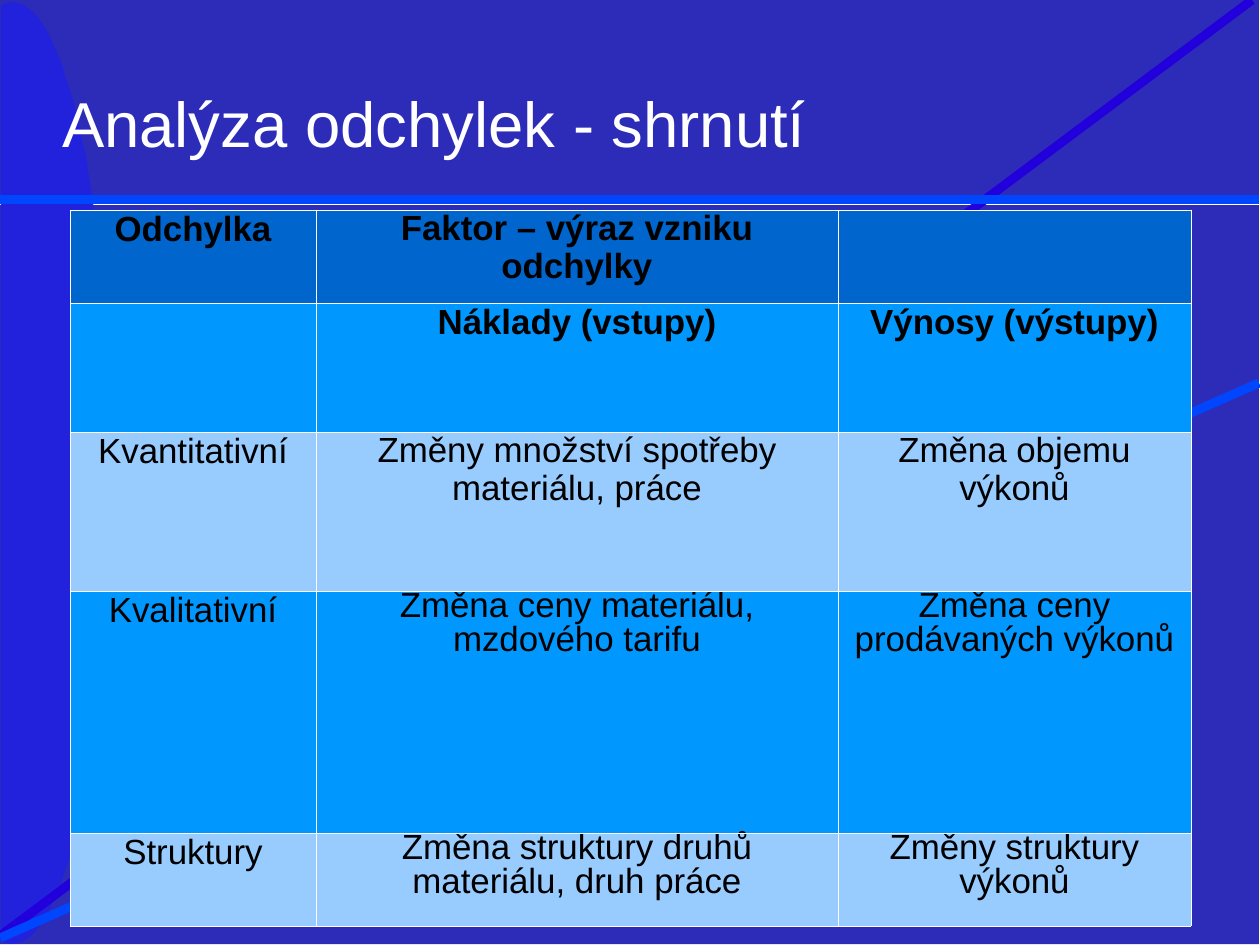
import math
import pptx
import pptx.util
import pptx.dml.color
import pptx.enum.shapes
import pptx.enum.text
import pptx.oxml
import pptx.oxml.ns

THEME = {
    "font": "Arial", "title_size": 40, "cell_size": 22,
    "background": "2C2CB8", "ellipse": "2222DC",
    "dark_line": "2200DC", "bright_line": "0046FF", "line_width": 5.67,
    "title": "FFFFFF", "cell_text": "000000", "border": "FFFFFF",
    "rows": ["0065CC", "0098FF", "98CCFF", "0098FF", "98CCFF"],
}
PX = 8007  # EMU per px
COLOR = pptx.dml.color.RGBColor.from_string
ALIGN = pptx.enum.text.PP_ALIGN


def px(*lengths):
    return [pptx.util.Emu(length * PX) for length in lengths]


def format_runs(para, size, color, bold=False):
    for span in para.runs:
        span.font.name = THEME["font"]
        span.font.size = pptx.util.Pt(size)
        span.font.bold = bold
        span.font.color.rgb = COLOR(color)


deck = pptx.Presentation()
deck.slide_width, deck.slide_height = px(1260, 945)
page = deck.slides.add_slide(deck.slide_layouts[5])

# Background panels above and below the horizontal line
panels = [
    page.shapes.add_shape(pptx.enum.shapes.MSO_SHAPE.RECTANGLE, *px(0, top, 1259, height))
    for top, height in [(0, 195), (205, 739)]
]

# Half ellipse along the left edge
outline = [
    (max(0, round(13 + 98 * math.cos(math.radians(angle)))),
     round(473 + 471 * math.sin(math.radians(angle))))
    for angle in range(-97, 98, 2)
]
builder = page.shapes.build_freeform(*outline[0], scale=PX)
builder.add_line_segments(outline[1:], close=True)
ellipse = builder.convert_to_shape()

for shape, color in [(panels[0], "background"), (panels[1], "background"), (ellipse, "ellipse")]:
    shape.shadow.inherit = False
    shape.fill.solid()
    shape.fill.fore_color.rgb = COLOR(THEME[color])
    shape.line.fill.background()

# Decorative lines
for ends, color in [
    ((1252, 0, 0, 936), "dark_line"),
    ((1259, 200, 0, 200), "bright_line"),
    ((1259, 383, 0, 938), "bright_line"),
]:
    line = page.shapes.add_connector(pptx.enum.shapes.MSO_CONNECTOR.STRAIGHT, *px(*ends))
    line.line.color.rgb = COLOR(THEME[color])
    line.line.width = pptx.util.Pt(THEME["line_width"])
    line.element.spPr.append(pptx.oxml.parse_xml(
        f'<a:effectLst {pptx.oxml.ns.nsdecls("a")}/>'))

# Title, brought in front of the background
title = page.shapes.title
title.element.getparent().append(title.element)
title.left, title.top, title.width, title.height = px(62, 51, 1095, 137)
frame = title.text_frame
frame.text = "Analýza odchylek - shrnutí"
frame.word_wrap = True
frame.auto_size = pptx.enum.text.MSO_AUTO_SIZE.NONE
frame.vertical_anchor = pptx.enum.text.MSO_ANCHOR.TOP
frame.margin_left, frame.margin_top, frame.margin_right, frame.margin_bottom = px(0, 33, 0, 0)
frame.paragraphs[0].alignment = ALIGN.LEFT
format_runs(frame.paragraphs[0], THEME["title_size"], THEME["title"])

# Table of deviations
rows = [
    ["Odchylka", "Faktor – výraz vzniku\nodchylky", ""],
    ["", "Náklady (vstupy)", "Výnosy (výstupy)"],
    ["Kvantitativní", "Změny množství spotřeby\nmateriálu, práce", "Změna objemu\nvýkonů"],
    ["Kvalitativní", "Změna ceny materiálu, mzdového tarifu", "Změna ceny prodávaných výkonů"],
    ["Struktury", "Změna struktury druhů materiálu, druh práce", "Změny struktury výkonů"],
]
column_widths = [246, 522, 353]
side_margins = [0, 50, 10]
row_heights = [93, 129, 159, 242, 93]
line_spacings = [23.9, None, 23.9, 21.4, 21.4]

table = page.shapes.add_table(
    len(rows), len(column_widths),
    *px(70, 210, sum(column_widths), sum(row_heights))).table
table.first_row = False
table.horz_banding = False
for column, width in zip(table.columns, px(*column_widths)):
    column.width = width
for row, height in zip(table.rows, px(*row_heights)):
    row.height = height

for r, texts in enumerate(rows):
    for c, text in enumerate(texts):
        cell = table.cell(r, c)
        cell.margin_left, cell.margin_right = px(side_margins[c], side_margins[c])
        cell.margin_top = cell.margin_bottom = 0
        cell.fill.solid()
        cell.fill.fore_color.rgb = COLOR(THEME["rows"][r])
        cell.text_frame.text = text
        for para in cell.text_frame.paragraphs:
            para.alignment = ALIGN.CENTER
            if c > 0 and line_spacings[r]:
                para.line_spacing = pptx.util.Pt(line_spacings[r])
            format_runs(para, THEME["cell_size"], THEME["cell_text"], bold=r < 2)
        # Thin borders go before the fill
        properties = cell._tc.get_or_add_tcPr()
        for position, side in enumerate(["lnL", "lnR", "lnT", "lnB"]):
            properties.insert(position, pptx.oxml.parse_xml(
                f'<a:{side} {pptx.oxml.ns.nsdecls("a")} w="1778"><a:solidFill>'
                f'<a:srgbClr val="{THEME["border"]}"/></a:solidFill></a:{side}>'))

deck.save("out.pptx")
